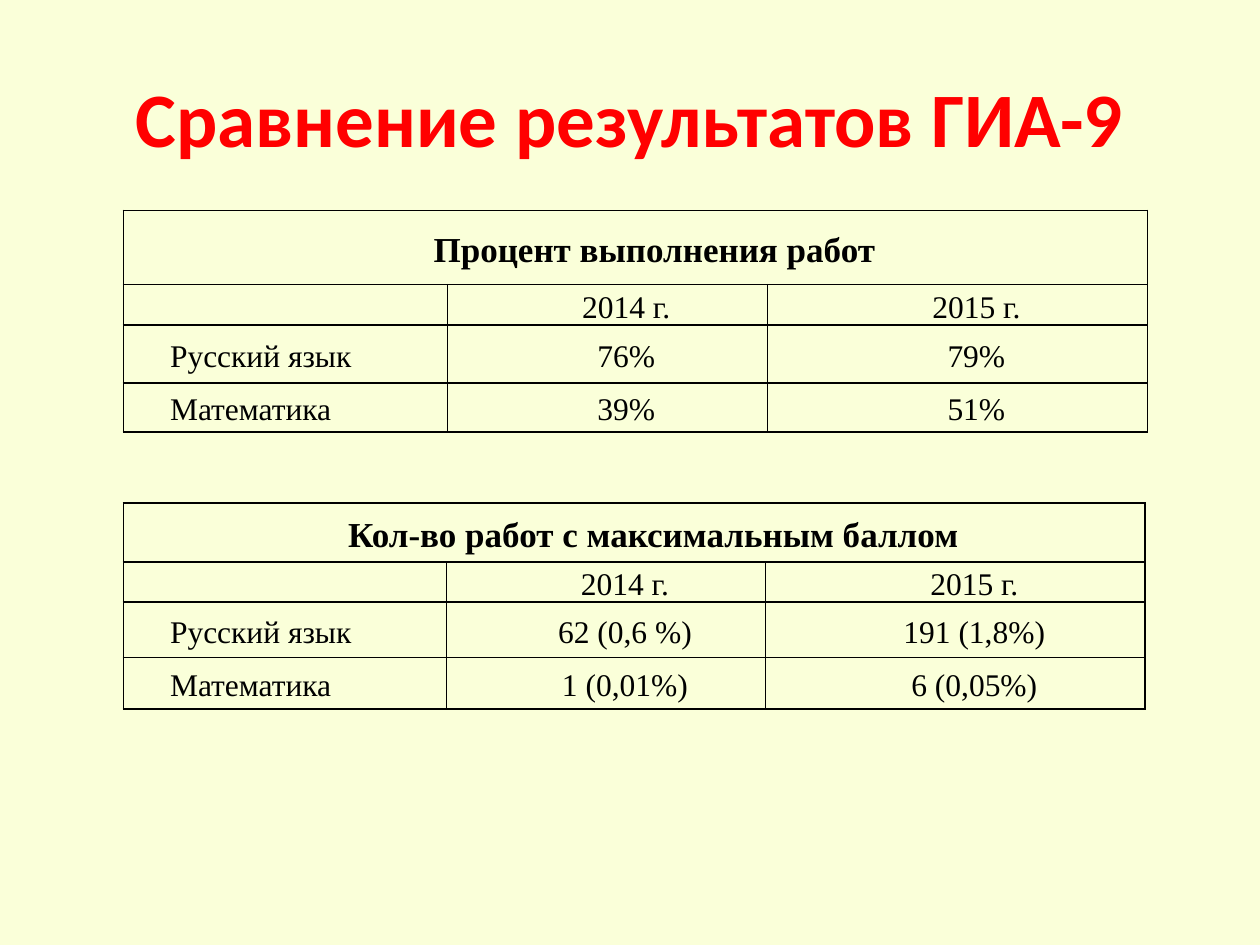
from lxml.etree import SubElement
from pptx import Presentation
from pptx.dml.color import RGBColor
from pptx.enum.text import MSO_ANCHOR, PP_ALIGN
from pptx.oxml.ns import qn
from pptx.util import Inches, Pt

BLACK = "000000"
RED = "FF0000"
CREAM = "FAFFD9"
YEARS = ["", "2014 г.", "2015 г."]


def paint(color, value):
    color.rgb = RGBColor.from_string(value)


def write(frame, text, size=18, font="Times New Roman", color=BLACK, bold=False,
          align=PP_ALIGN.CENTER, indent=0, spacing=None):
    frame.word_wrap = True
    para = frame.paragraphs[0]
    para.alignment = align
    para.line_spacing = spacing
    para._p.get_or_add_pPr().set("indent", str(Inches(indent)))
    if text:
        span = para.add_run()
        span.text = text
        span.font.size = Pt(size)
        span.font.name = font
        span.font.bold = bold
        paint(span.font.color, color)


def outline(cell, width=1):
    properties = cell._tc.get_or_add_tcPr()
    for side in ("lnL", "lnR", "lnT", "lnB"):
        line = SubElement(properties, qn(f"a:{side}"), w=str(Pt(width)))
        fill = SubElement(line, qn("a:solidFill"))
        SubElement(fill, qn("a:srgbClr"), val=BLACK)


def add_title(page, text, box):
    title = page.shapes.title
    title.left, title.top, title.width, title.height = map(Inches, box)
    title.text_frame.vertical_anchor = MSO_ANCHOR.MIDDLE
    write(title.text_frame, text, size=44, font="Calibri", color=RED, bold=True)


def add_results(page, heading, results, box, columns, rows):
    grid = [[heading, "", ""], YEARS, *results]
    table = page.shapes.add_table(len(rows), len(columns), *map(Inches, box)).table
    table.first_row = table.horz_banding = False
    for column, share in zip(table.columns, columns):
        column.width = Inches(box[2] * share / sum(columns))
    for row, height in zip(table.rows, rows):
        row.height = Inches(height)
    table.cell(0, 0).merge(table.cell(0, len(columns) - 1))
    for r, values in enumerate(grid):
        for c, value in enumerate(values):
            cell = table.cell(r, c)
            cell.margin_left = cell.margin_right = Inches(0.07)
            cell.margin_top = cell.margin_bottom = 0
            cell.vertical_anchor = MSO_ANCHOR.MIDDLE
            outline(cell)
            cell.fill.background()
            is_heading = r == 0
            is_subject = r > 1 and c == 0
            write(cell.text_frame, value, size=20 if is_heading else 18, bold=is_heading,
                  align=PP_ALIGN.JUSTIFY if is_subject else PP_ALIGN.CENTER,
                  indent=0.3, spacing=1.15 if value else None)


def main():
    deck = Presentation()
    deck.slide_width, deck.slide_height = Inches(10), Inches(7.5)
    page = deck.slides.add_slide(deck.slide_layouts[5])
    page.background.fill.solid()
    paint(page.background.fill.fore_color, CREAM)
    add_title(page, "Сравнение результатов ГИА-9", (0.5, 0.3, 9, 1.25))
    columns = (2.57, 2.54, 3.02)
    add_results(page, "Процент выполнения работ",
                [["Русский язык", "76%", "79%"], ["Математика", "39%", "51%"]],
                (0.98, 1.67, 8.13, 1.78), columns, (0.59, 0.28, 0.46, 0.39))
    add_results(page, "Кол-во работ с максимальным баллом",
                [["Русский язык", "62 (0,6 %)", "191 (1,8%)"],
                 ["Математика", "1 (0,01%)", "6 (0,05%)"]],
                (0.98, 3.99, 8.11, 1.67), columns, (0.47, 0.3, 0.44, 0.41))
    deck.save("out.pptx")


if __name__ == "__main__":
    main()
